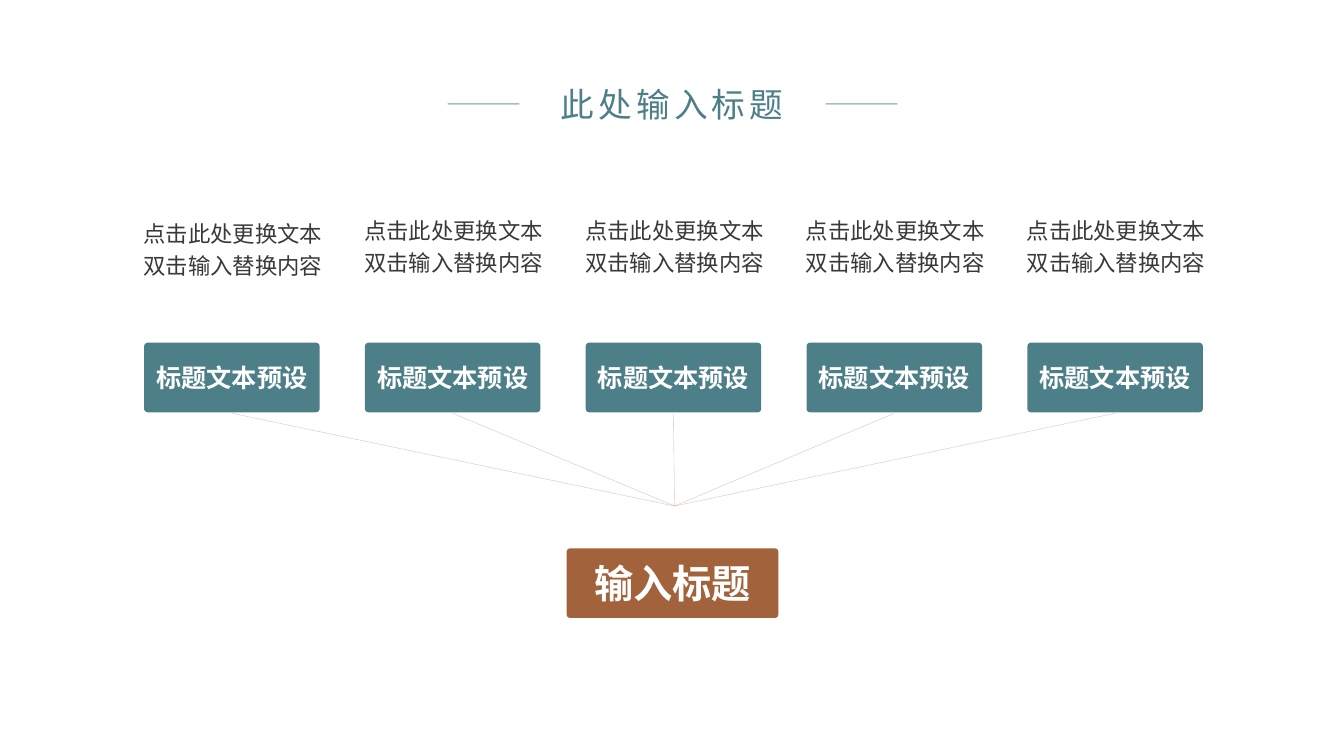
import pptx
import pptx.dml.color
import pptx.enum.shapes
import pptx.enum.text
import pptx.oxml.ns
import pptx.util
from dataclasses import dataclass
from lxml import etree

PX = 9144  # EMU per px, 100 px to the inch


@dataclass(frozen=True)
class Theme:
    font: str = "Noto Sans CJK SC"
    teal: str = "4D7F89"
    brown: str = "A2633C"
    ink: str = "3B3838"
    white: str = "FFFFFF"
    caption_size: int = 16
    branch_size: int = 18
    title_size: int = 24
    root_size: int = 28


THEME = Theme()

# Branch grid: five columns sharing one pitch
BRANCH_COUNT = 5
FIRST_CENTER = 230
PITCH = 219
BRANCH_TOP, BRANCH_WIDTH, BOX_HEIGHT = 340, 174, 69
CAPTION_WIDTH = 194
HUB = (669, 502)


def px(value):
    return pptx.util.Emu(value * PX)


def rgb(value):
    return pptx.dml.color.RGBColor.from_string(value)


def put_text(frame, text, *, size, color, bold=False, spacing=None,
             line_spacing=None, inset=0, wrap=True, middle=False, fade_to=None):
    """Write one centred paragraph; fade_to makes its colour a gradient."""
    frame.word_wrap = wrap
    frame.margin_left = frame.margin_right = px(inset)
    frame.margin_top = frame.margin_bottom = px(inset // 2 if inset > 2 else inset)
    anchor = pptx.enum.text.MSO_ANCHOR
    frame.vertical_anchor = anchor.MIDDLE if middle else anchor.TOP
    paragraph = frame.paragraphs[0]
    paragraph.alignment = pptx.enum.text.PP_ALIGN.CENTER
    if line_spacing:
        paragraph.line_spacing = line_spacing
    run = paragraph.add_run()
    run.text = text
    run.font.size = pptx.util.Pt(size)
    run.font.bold = bold
    if fade_to:
        run.font.fill.gradient()
        run.font.fill.gradient_angle = 0
        for stop, stop_color in zip(run.font.fill.gradient_stops, (color, fade_to)):
            stop.color.rgb = rgb(stop_color)
    else:
        run.font.color.rgb = rgb(color)
    run.font.name = THEME.font
    # East Asian glyphs take their own typeface entry
    properties = run.font._element
    etree.SubElement(properties, pptx.oxml.ns.qn("a:ea"), typeface=THEME.font)
    if spacing:
        properties.set("spc", str(spacing * 100))


def add_label(shapes, text, left, top, width, height, **text_format):
    label = shapes.add_textbox(px(left), px(top), px(width), px(height))
    put_text(label.text_frame, text, **text_format)
    return label


def add_box(shapes, text, left, top, width, fill, size):
    box = shapes.add_shape(pptx.enum.shapes.MSO_SHAPE.ROUNDED_RECTANGLE,
                           px(left), px(top), px(width), px(BOX_HEIGHT))
    box.adjustments[0] = 0.05
    box.shadow.inherit = False
    box.fill.solid()
    box.fill.fore_color.rgb = rgb(fill)
    box.line.fill.background()
    put_text(box.text_frame, text, size=size, color=THEME.white, bold=True,
             inset=2, wrap=False, middle=True)


def add_line(shapes, start, end, color, weight, opacity):
    line = shapes.add_connector(pptx.enum.shapes.MSO_CONNECTOR.STRAIGHT,
                                *map(px, start + end))
    line.line.width = pptx.util.Pt(weight)
    line.line.color.rgb = rgb(color)
    qn = pptx.oxml.ns.qn
    properties = line._element.spPr
    etree.SubElement(next(properties.iter(qn("a:srgbClr"))), qn("a:alpha"),
                     val=str(opacity * 1000))
    etree.SubElement(properties, qn("a:effectLst"))


def add_title(slide):
    shapes = slide.shapes.add_group_shape().shapes
    for left in (444, 819):
        add_line(shapes, (left, 103), (left + 71, 103), THEME.teal, 1, 50)
    title = add_label(shapes, "此处输入标题", 519, 78, 295, 50,
                      size=THEME.title_size, color=THEME.teal,
                      fade_to=THEME.brown, spacing=3, inset=10)
    title.text_frame.auto_size = pptx.enum.text.MSO_AUTO_SIZE.SHAPE_TO_FIT_TEXT


def add_branch(slide, index):
    center = FIRST_CENTER + PITCH * index
    caption_top = 213 if index == 0 else 210
    add_line(slide.shapes, HUB, (center, 410), THEME.brown, 0.25, 40)
    add_box(slide.shapes, "标题文本预设", center - BRANCH_WIDTH // 2, BRANCH_TOP,
            BRANCH_WIDTH, THEME.teal, THEME.branch_size)
    add_label(slide.shapes, "点击此处更换文本双击输入替换内容",
              center - CAPTION_WIDTH // 2 + 1, caption_top, CAPTION_WIDTH, 79,
              size=THEME.caption_size, color=THEME.ink, line_spacing=1.2)


def main():
    deck = pptx.Presentation()
    deck.slide_width, deck.slide_height = px(1333), px(750)
    slide = deck.slides.add_slide(deck.slide_layouts[6])

    # Heading between two rules
    add_title(slide)

    # Branches joined at the hub
    for index in range(BRANCH_COUNT):
        add_branch(slide, index)

    # Root box below the hub
    add_box(slide.shapes, "输入标题", 562, 544, 210, THEME.brown, THEME.root_size)

    deck.save("out.pptx")


if __name__ == "__main__":
    main()
